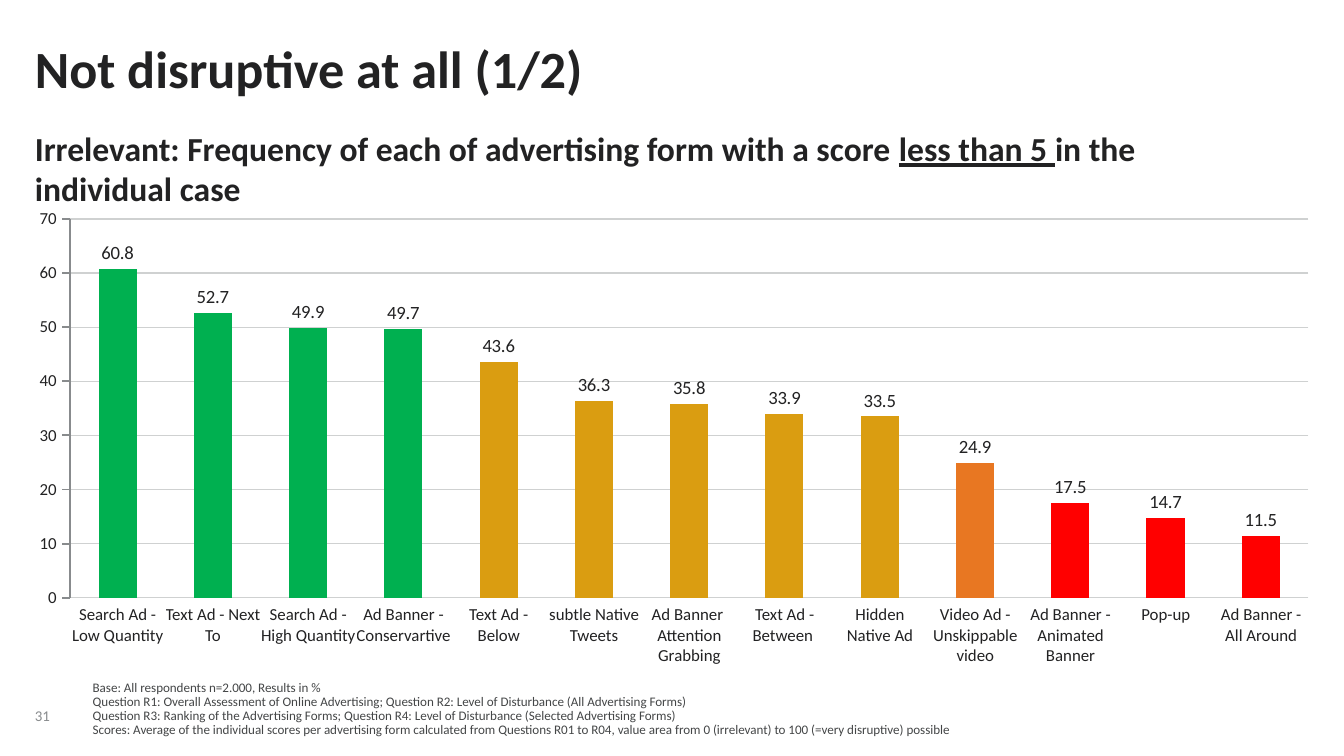
"""Build the slide on advertising forms that are not disruptive at all."""
from dataclasses import dataclass

from lxml import etree
from pptx import Presentation
from pptx.chart.data import CategoryChartData
from pptx.dml.color import RGBColor
from pptx.enum.chart import XL_CHART_TYPE as ChartType
from pptx.enum.chart import XL_LABEL_POSITION as LabelPosition
from pptx.enum.chart import XL_TICK_MARK as TickMark
from pptx.enum.text import MSO_ANCHOR as Anchor
from pptx.enum.text import PP_ALIGN as Align
from pptx.oxml.ns import qn
from pptx.util import Inches, Pt


@dataclass(frozen=True)
class Theme:
    font: str = "Calibri"
    ink: str = "222223"
    muted: str = "888B8D"
    note: str = "444647"
    grid: str = "CFD1D1"
    green: str = "00B050"
    amber: str = "DA9D11"
    orange: str = "E87722"
    red: str = "FF0000"
    title_size: int = 28
    subtitle_size: int = 18
    value_size: int = 10
    label_size: int = 9
    number_size: int = 8
    note_size: int = 7


theme = Theme()


def write(paragraph, text, size, color=theme.ink, bold=False, underline=False):
    for index, line in enumerate(text.split("\n")):
        if index:
            paragraph.add_line_break()
        run = paragraph.add_run()
        run.text = line
        font = run.font
        font.name, font.size = theme.font, Pt(size)
        font.bold, font.underline = bold, underline
        font.color.rgb = RGBColor.from_string(color)


def add_frame(slide, left, top, width, height, anchor=Anchor.TOP, wrap=True):
    box = slide.shapes.add_textbox(Inches(left), Inches(top), Inches(width), Inches(height))
    frame = box.text_frame
    frame.margin_left = frame.margin_right = frame.margin_top = frame.margin_bottom = 0
    frame.word_wrap, frame.vertical_anchor = wrap, anchor
    return frame


bars = [
    ("Search Ad - Low Quantity", 60.8, theme.green),
    ("Text Ad - Next To", 52.7, theme.green),
    ("Search Ad - High Quantity", 49.9, theme.green),
    ("Ad Banner - Conservartive", 49.7, theme.green),
    ("Text Ad - Below", 43.6, theme.amber),
    ("subtle Native Tweets", 36.3, theme.amber),
    ("Ad Banner \nAttention Grabbing", 35.8, theme.amber),
    ("Text Ad - Between ", 33.9, theme.amber),
    ("Hidden Native Ad", 33.5, theme.amber),
    ("Video Ad - Unskippable video", 24.9, theme.orange),
    ("Ad Banner - Animated Banner", 17.5, theme.red),
    ("Pop-up", 14.7, theme.red),
    ("Ad Banner - All Around", 11.5, theme.red),
]
notes = [
    "Base: All respondents n=2.000, Results in %",
    "Question R1: Overall Assessment of Online Advertising; "
    "Question R2: Level of Disturbance (All Advertising Forms)",
    "Question R3: Ranking of the Advertising Forms; "
    "Question R4: Level of Disturbance (Selected Advertising Forms)",
    "Scores: Average of the individual scores per advertising form calculated from "
    "Questions R01 to R04, value area from 0 (irrelevant) to 100 (=very disruptive) possible",
]

presentation = Presentation()
presentation.slide_width = Inches(10)
presentation.slide_height = presentation.slide_width * 9 // 16
slide = presentation.slides.add_slide(presentation.slide_layouts[6])

number = add_frame(slide, 0.26, 5.13, 0.34, 0.26, anchor=Anchor.BOTTOM, wrap=False)
number.paragraphs[0].line_spacing = 0.85
write(number.paragraphs[0], "31", theme.number_size, color=theme.muted)

chart_data = CategoryChartData(number_format="0.0")
chart_data.categories = [str(position) for position in range(1, len(bars) + 1)]
chart_data.add_series("Series 1", [value for _, value, _ in bars])
chart = slide.shapes.add_chart(
    ChartType.COLUMN_CLUSTERED, Inches(0.26), Inches(1.33), Inches(9.66), Inches(3.7), chart_data
).chart
chart.has_legend = chart.has_title = False
chart.font.name, chart.font.size = theme.font, Pt(theme.value_size)
chart.font.color.rgb = RGBColor.from_string(theme.ink)
chart.category_axis.visible = False

axis = chart.value_axis
axis.minimum_scale, axis.maximum_scale, axis.major_unit = 0, 70, 10
axis.major_tick_mark, axis.minor_tick_mark = TickMark.OUTSIDE, TickMark.NONE
axis.tick_labels.number_format, axis.tick_labels.number_format_is_linked = "0", False
axis.tick_labels.font.size = Pt(theme.label_size)
axis.tick_labels.font.color.rgb = RGBColor.from_string(theme.ink)
for line, color, width in (
    (axis.format.line, theme.muted, 1),
    (axis.major_gridlines.format.line, theme.grid, 0.75),
):
    line.color.rgb = RGBColor.from_string(color)
    line.width = Pt(width)

plot = chart.plots[0]
plot.gap_width, plot.vary_by_categories, plot.has_data_labels = 150, False, True
labels = plot.data_labels
labels.show_value, labels.position = True, LabelPosition.OUTSIDE_END
labels.number_format, labels.number_format_is_linked = "0.0", False
labels.font.size = Pt(theme.value_size)
labels.font.color.rgb = RGBColor.from_string(theme.ink)
series = plot.series[0]
series.format.fill.solid()
series.format.fill.fore_color.rgb = RGBColor.from_string(theme.green)
for index, (_, _, color) in enumerate(bars):
    if color != theme.green:
        fill = series.points[index].format.fill
        fill.solid()
        fill.fore_color.rgb = RGBColor.from_string(color)

plot_area = chart.element.find(".//" + qn("c:plotArea"))
for layout in plot_area.findall(qn("c:layout")):
    plot_area.remove(layout)
layout = etree.Element(qn("c:layout"))
plot_area.insert(0, layout)
manual = etree.SubElement(layout, qn("c:manualLayout"))
for tag, value in (
    ("layoutTarget", "inner"), ("xMode", "edge"), ("yMode", "edge"),
    ("x", "0.027"), ("y", "0.081"), ("w", "0.954"), ("h", "0.762"),
):
    etree.SubElement(manual, qn(f"c:{tag}"), val=value)

title = add_frame(slide, 0.26, 0.27, 7.35, 0.92)
write(title.paragraphs[0], "Not disruptive at all (1/2)", theme.title_size, bold=True)

subtitle = add_frame(slide, 0.26, 0.95, 9.24, 0.25).paragraphs[0]
for text, underline in (
    ("Irrelevant: Frequency of each of advertising form with a score ", False),
    ("less than 5 ", True),
    ("in the individual case", False),
):
    write(subtitle, text, theme.subtitle_size, bold=True, underline=underline)

footnote = add_frame(slide, 0.69, 5.07, 6.7, 0.42, anchor=Anchor.BOTTOM)
for index, text in enumerate(notes):
    paragraph = footnote.add_paragraph() if index else footnote.paragraphs[0]
    paragraph.line_spacing = 0.9
    write(paragraph, text, theme.note_size, color=theme.note)

table = slide.shapes.add_table(
    1, len(bars), Inches(0.52), Inches(4.5), Inches(9.22), Inches(0.41)
).table
table.first_row = table.horz_banding = False
for cell, (name, _, _) in zip(table.rows[0].cells, bars):
    cell.fill.background()
    cell.margin_left = cell.margin_right = cell.margin_top = cell.margin_bottom = 0
    paragraph = cell.text_frame.paragraphs[0]
    paragraph.alignment = Align.CENTER
    write(paragraph, name, theme.label_size)

presentation.save("out.pptx")
